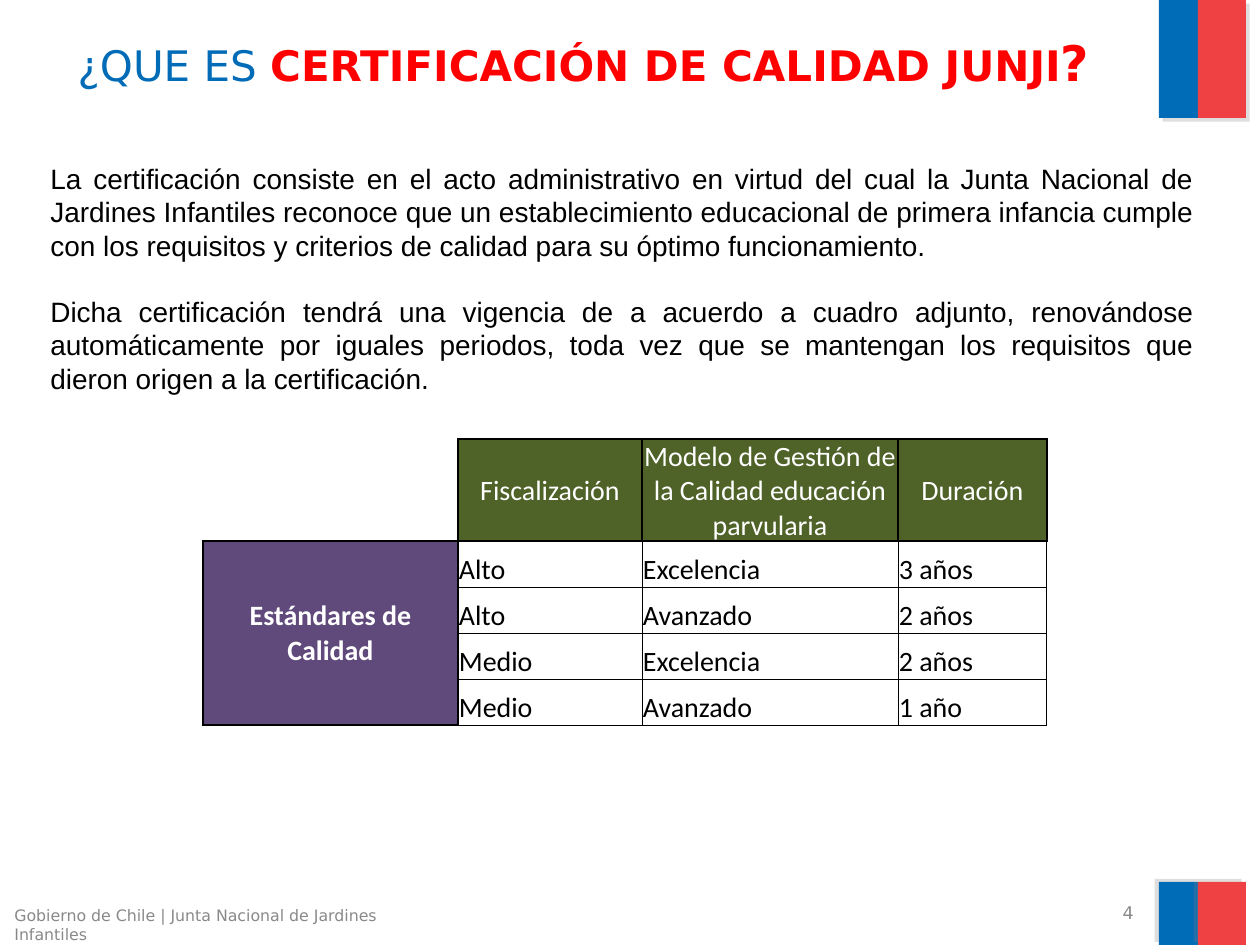
from pptx import Presentation
from pptx import util as u
from pptx.dml.color import RGBColor
from pptx.enum import shapes, text
from pptx.oxml import parse_xml
from pptx.oxml.ns import nsdecls

PX_PER_INCH = 126
BLUE, RED, GREY = "006CB7", "EF4144", "898989"
GREEN, PURPLE, BLACK, WHITE = "4F6228", "604A7B", "000000", "FFFFFF"
LEFT, CENTER, RIGHT, JUSTIFY = (text.PP_ALIGN.LEFT, text.PP_ALIGN.CENTER,
                                text.PP_ALIGN.RIGHT, text.PP_ALIGN.JUSTIFY)
MIDDLE, BOTTOM, TOP = (text.MSO_ANCHOR.MIDDLE, text.MSO_ANCHOR.BOTTOM,
                       text.MSO_ANCHOR.TOP)


def px(length):
    return u.Inches(length / PX_PER_INCH)


def color(hex_value):
    return RGBColor.from_string(hex_value)


def format_run(run, size, font, fill, bold=False):
    run.font.size = u.Pt(size)
    run.font.name = font
    run.font.bold = bold
    run.font.color.rgb = color(fill)


class Deck:
    """Holds the fonts of the deck and the slide being built."""

    heading_font, body_font, table_font = "DejaVu Sans", "Arial", "Calibri"

    def __init__(self):
        self.prs = Presentation()
        self.prs.slide_width, self.prs.slide_height = px(1260), px(945)
        self.slide = self.prs.slides.add_slide(self.prs.slide_layouts[5])

    def flag_block(self, x, y, w, h, fill, shadow_angle):
        block = self.slide.shapes.add_shape(
            shapes.MSO_SHAPE.RECTANGLE, px(x), px(y), px(w), px(h))
        block.fill.solid()
        block.fill.fore_color.rgb = color(fill)
        block.line.fill.background()
        block.shadow.inherit = False
        properties = block.fill._xPr
        properties.remove(properties.find(
            "{http://schemas.openxmlformats.org/drawingml/2006/main}effectLst"))
        properties.append(parse_xml(
            f'<a:effectLst {nsdecls("a")}><a:outerShdw blurRad="0" '
            f'dist="{u.Pt(3)}" dir="{shadow_angle * 60000}" algn="ctr" '
            'rotWithShape="0"><a:srgbClr val="808080"><a:alpha val="25000"/>'
            '</a:srgbClr></a:outerShdw></a:effectLst>'))

    def title(self, x, y, w, h, parts):
        """Fill the title with (wording, size, colour, bold) parts."""
        title = self.slide.shapes.title
        title.left, title.top, title.width, title.height = map(px, (x, y, w, h))
        frame = title.text_frame
        frame.vertical_anchor = TOP
        frame.auto_size = text.MSO_AUTO_SIZE.NONE
        heading = frame.paragraphs[0]
        heading.alignment = CENTER
        for wording, size, fill, bold in parts:
            run = heading.add_run()
            run.text = wording
            format_run(run, size, self.heading_font, fill, bold)

    def text_box(self, x, y, w, h, paragraphs, size, font, fill,
                 align=LEFT, anchor=TOP, gap=0):
        frame = self.slide.shapes.add_textbox(
            px(x), px(y), px(w), px(h)).text_frame
        frame.word_wrap = True
        frame.vertical_anchor = anchor
        frame.text = "\n".join(paragraphs)
        for index, paragraph in enumerate(frame.paragraphs):
            paragraph.alignment = align
            if index:
                paragraph.space_before = u.Pt(gap)
            format_run(paragraph.runs[0], size, font, fill)

    def borders(self, cell, left, right, top, bottom):
        """Set the border widths in points; 0 hides a border."""
        properties = cell._tc.get_or_add_tcPr()
        for side, width in zip("LRTB", (left, right, top, bottom)):
            paint = (f'<a:solidFill><a:srgbClr val="{BLACK}"/></a:solidFill>'
                     if width else "<a:noFill/>")
            properties.append(parse_xml(
                f'<a:ln{side} {nsdecls("a")} w="{u.Pt(width)}">'
                f'{paint}</a:ln{side}>'))

    def cell(self, cell, wording, fill, ink, align, anchor, bold=False):
        cell.margin_left = cell.margin_right = cell.margin_top = px(1)
        cell.margin_bottom = 0
        cell.vertical_anchor = anchor
        if fill:
            cell.fill.solid()
            cell.fill.fore_color.rgb = color(fill)
        else:
            cell.fill.background()
        if wording:
            cell.text = wording
            paragraph = cell.text_frame.paragraphs[0]
            paragraph.alignment = align
            format_run(paragraph.runs[0], 16, self.table_font, ink, bold)

    def standards_table(self, x, y, widths, heights, header, group, rows):
        """Draw the levels, with one group cell spanning all rows at left."""
        table = self.slide.shapes.add_table(
            len(heights), len(widths), px(x), px(y),
            px(sum(widths)), px(sum(heights))).table
        table.first_row = table.horz_banding = False
        for column, width in zip(table.columns, widths):
            column.width = px(width)
        for row, height in zip(table.rows, heights):
            row.height = px(height)

        self.borders(table.cell(0, 0), 0, 1, 0, 1)
        self.cell(table.cell(0, 0), "", None, BLACK, LEFT, BOTTOM)
        for c, wording in enumerate(header, 1):
            self.borders(table.cell(0, c), 1, 1, 1, 1)
            self.cell(table.cell(0, c), wording, GREEN, WHITE, CENTER, MIDDLE)
        for r, levels in enumerate(rows, 1):
            self.borders(table.cell(r, 0), 1, 1, 1, 1)
            self.cell(table.cell(r, 0), group if r == 1 else "", PURPLE,
                      WHITE, CENTER, MIDDLE, True)
            for c, wording in enumerate(levels, 1):
                level = table.cell(r, c)
                self.borders(level, 1 if c == 1 else 0.5, 0.5,
                             1 if r == 1 else 0.5, 0.5)
                self.cell(level, wording, None, BLACK, LEFT, BOTTOM)
        table.cell(1, 0).merge(table.cell(len(rows), 0))


def main():
    deck = Deck()
    for y, h, angle in ((0, 118, 45), (882, 63, 215)):
        deck.flag_block(1159, y, 39, h, BLUE, angle)
        deck.flag_block(1198, y, 48, h, RED, angle)

    deck.text_box(2, 900, 400, 34,
                  ["Gobierno de Chile | Junta Nacional de Jardines Infantiles"],
                  9, deck.heading_font, GREY)
    deck.text_box(852, 900, 294, 26, ["4"], 10, deck.heading_font, GREY,
                  RIGHT, MIDDLE)
    deck.title(21, 26, 1125, 122, [
        ("¿QUE ES ", 24, BLUE, False),
        ("CERTIFICACIÓN DE CALIDAD JUNJI", 24, "FF0000", True),
        ("?", 28, "FF0000", True)])
    deck.text_box(38, 155, 1168, 285, [
        "La certificación consiste en el acto administrativo en virtud del "
        "cual la Junta Nacional de Jardines Infantiles reconoce que un "
        "establecimiento educacional de primera infancia cumple con los "
        "requisitos y criterios de calidad para su óptimo funcionamiento.",
        "Dicha certificación tendrá una vigencia de a acuerdo a cuadro "
        "adjunto, renovándose automáticamente por iguales periodos, toda vez "
        "que se mantengan los requisitos que dieron origen a la "
        "certificación."],
        16, deck.body_font, BLACK, JUSTIFY, gap=18.4)
    deck.standards_table(
        203, 439, [255, 184, 256, 149], [102] + [46] * 4,
        ["Fiscalización", "Modelo de Gestión de la Calidad educación parvularia",
         "Duración"],
        "Estándares de Calidad",
        [("Alto", "Excelencia", "3 años"),
         ("Alto", "Avanzado", "2 años"),
         ("Medio", "Excelencia", "2 años"),
         ("Medio", "Avanzado", "1 año")])
    deck.prs.save("out.pptx")


if __name__ == "__main__":
    main()
